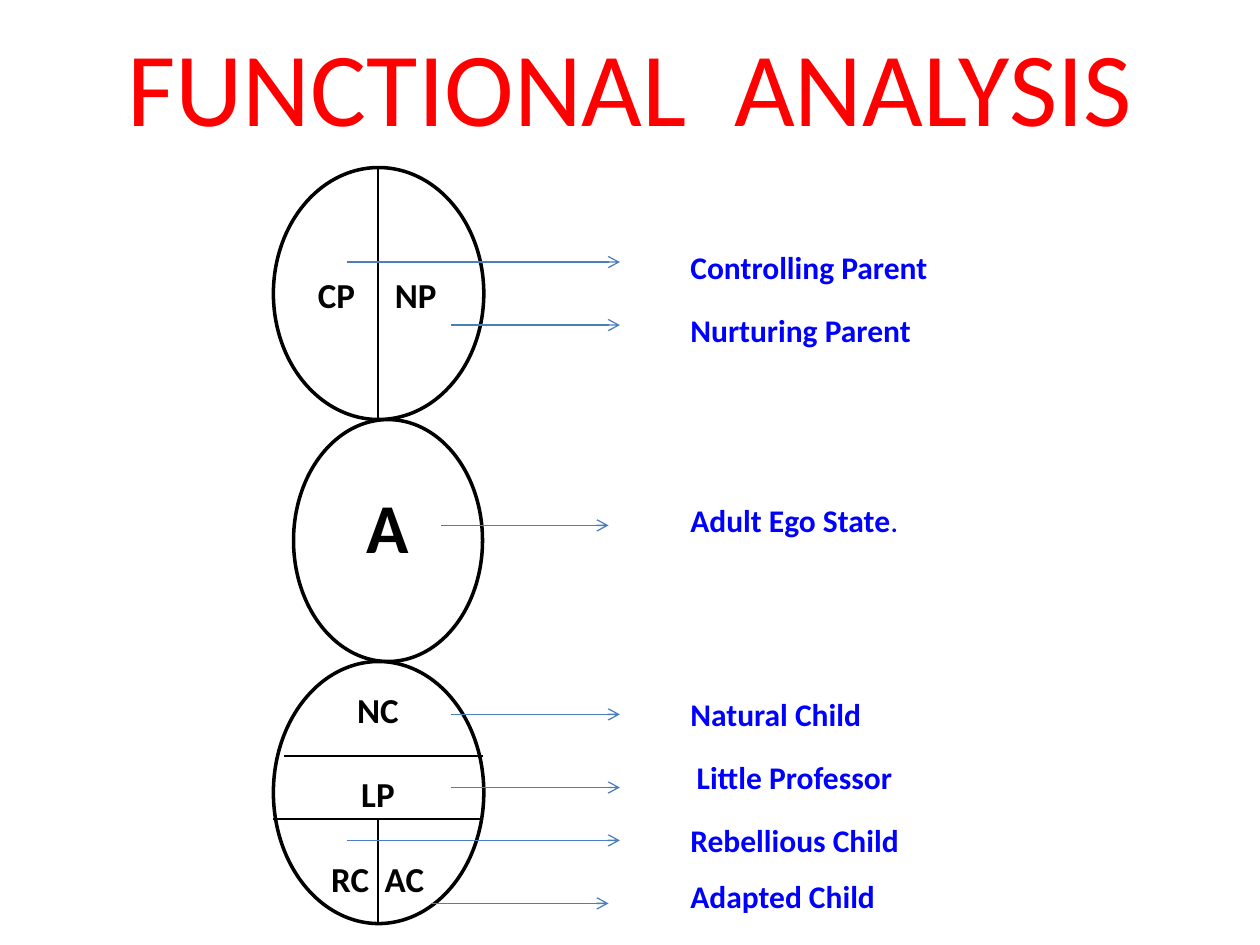
from lxml import etree
from pptx import Presentation
from pptx.dml.color import RGBColor
from pptx.enum import shapes, text
from pptx.oxml.ns import qn
from pptx.util import Inches, Pt

BLACK = RGBColor(0, 0, 0)
WHITE = RGBColor(255, 255, 255)
RED = RGBColor(255, 0, 0)
BLUE = RGBColor(0, 0, 255)
ARROW_BLUE = RGBColor(0x4B, 0x7E, 0xBC)

TITLE = "FUNCTIONAL  ANALYSIS"
# left, top, width, height
EGO_STATES = [
    (2.17, 1.33, 1.67, 2),
    (2.33, 3.33, 1.5, 1.92),
    (2.17, 5.25, 1.67, 2.08),
]
# x1, y1, x2, y2
DIVIDERS = [
    (3, 1.33, 3, 3.33),
    (3.83, 6, 2.25, 6),
    (3.83, 6.5, 2.17, 6.5),
    (3, 6.5, 3, 7.33),
]
# text, centre x, centre y, size
INITIALS = [
    ("CP", 2.67, 2.34, 20),
    ("NP", 3.3, 2.34, 20),
    ("A", 3.08, 4.17, 40),
    ("NC", 3, 5.63, 20),
    ("LP", 3, 6.3, 20),
    ("RC", 2.78, 6.97, 20),
    ("AC", 3.21, 6.97, 20),
]
# text, left, centre y, arrow start x, arrow end x, arrow y
LABELS = [
    ("Controlling Parent", 5.48, 2.12, 2.75, 4.92, 2.08),
    ("Nurturing Parent", 5.48, 2.62, 3.58, 4.92, 2.58),
    ("Adult Ego State", 5.48, 4.13, 3.5, 4.83, 4.17),
    ("Natural Child", 5.48, 5.67, 3.58, 4.92, 5.67),
    ("Little Professor", 5.53, 6.17, 3.58, 4.92, 6.25),
    ("Rebellious Child", 5.48, 6.67, 2.75, 4.92, 6.67),
    ("Adapted Child", 5.48, 7.11, 3.42, 4.83, 7.17),
]
LABEL_W, LABEL_H = 2.5, 0.4
INITIAL_W, INITIAL_H = 0.6, 0.7


def add_run(p, content, size, color, bold):
    r = p.add_run()
    r.text = content
    r.font.name = "Calibri"
    r.font.size = Pt(size)
    r.font.bold = bold
    r.font.color.rgb = color


def add_text(s, content, box, size=18, color=BLACK, bold=True,
             align=text.PP_ALIGN.CENTER, inset=0):
    tf = s.shapes.add_textbox(*map(Inches, box)).text_frame
    tf.word_wrap = True
    tf.vertical_anchor = text.MSO_ANCHOR.MIDDLE
    tf.margin_left = tf.margin_right = Inches(inset)
    tf.margin_top = tf.margin_bottom = Inches(inset / 2)
    p = tf.paragraphs[0]
    p.alignment = align
    add_run(p, content, size, color, bold)
    return p


def add_line(s, x1, y1, x2, y2, color=BLACK, arrow=False):
    c = s.shapes.add_connector(shapes.MSO_CONNECTOR.STRAIGHT,
                               *map(Inches, (x1, y1, x2, y2)))
    c.line.color.rgb = color
    c.line.width = Pt(0.75)
    if arrow:
        etree.SubElement(c.line._get_or_add_ln(), qn("a:tailEnd"), type="arrow")
    etree.SubElement(c._element.spPr, qn("a:effectLst"))


def add_ellipse(s, box):
    sp = s.shapes.add_shape(shapes.MSO_SHAPE.OVAL, *map(Inches, box))
    sp.shadow.inherit = False
    sp.fill.solid()
    sp.fill.fore_color.rgb = WHITE
    sp.line.color.rgb = BLACK
    sp.line.width = Pt(2)


def main():
    prs = Presentation()
    prs.slide_width, prs.slide_height = Inches(10), Inches(7.5)
    s = prs.slides.add_slide(prs.slide_layouts[6])

    add_text(s, TITLE, (0.5, 0.17, 9, 1), size=60, color=RED, bold=False,
             inset=0.1)
    for box in EGO_STATES:
        add_ellipse(s, box)
    for ends in DIVIDERS:
        add_line(s, *ends)
    for name, x, y, size in INITIALS:
        add_text(s, name, (x - INITIAL_W / 2, y - INITIAL_H / 2,
                           INITIAL_W, INITIAL_H), size=size)
    for name, left, y, x1, x2, arrow_y in LABELS:
        p = add_text(s, name, (left, y - LABEL_H / 2, LABEL_W, LABEL_H),
                     color=BLUE, align=text.PP_ALIGN.LEFT)
        if name == "Adult Ego State":
            add_run(p, ".", 18, BLUE, False)
        add_line(s, x1, arrow_y, x2, arrow_y, color=ARROW_BLUE, arrow=True)

    prs.save("out.pptx")


if __name__ == "__main__":
    main()
